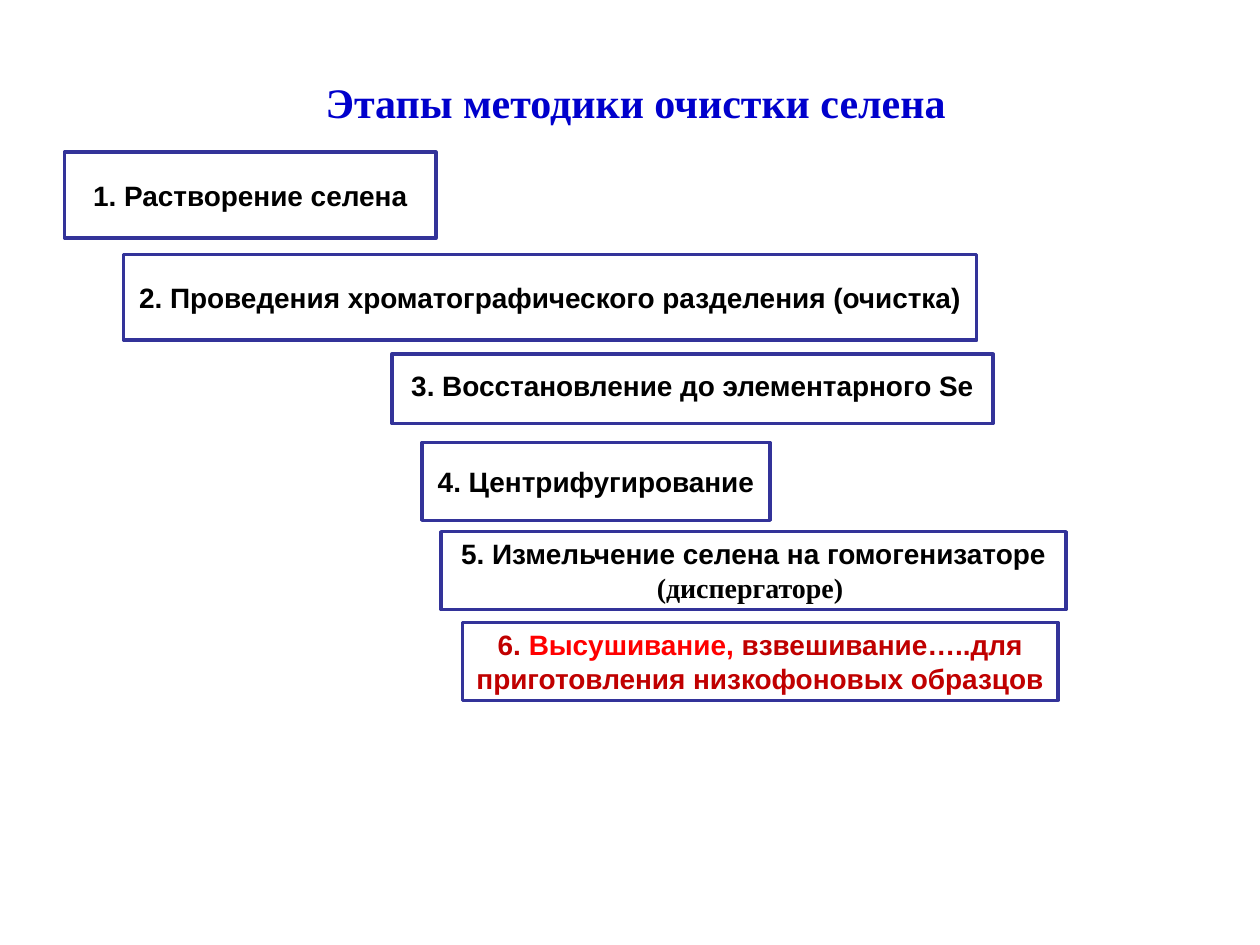
import dataclasses

import pptx
import pptx.dml.color
import pptx.enum.shapes
import pptx.enum.text
from pptx.util import Cm, Pt


@dataclasses.dataclass(frozen=True)
class Theme:
    title_font: str = "Times New Roman"
    step_font: str = "Arial"
    title_size: int = 24
    step_size: int = 16
    title: str = "0000CC"
    text: str = "000000"
    accent: str = "C00000"
    highlight: str = "FF0000"
    fill: str = "FFFFFF"
    border: str = "333399"
    border_width: int = 2


THEME = Theme()


@dataclasses.dataclass(frozen=True)
class TextRun:
    text: str
    color: str = THEME.text
    font: str = THEME.step_font
    size: int = THEME.step_size


@dataclasses.dataclass(frozen=True)
class Step:
    """A step box; all lengths are in centimetres."""
    left: float
    top: float
    width: float
    height: float
    runs: tuple
    bottom_margin: float = 0.13


STEPS = (
    Step(1.3, 3.07, 7.49, 1.73, (TextRun("1. Растворение селена"),)),
    Step(2.49, 5.13, 17.2, 1.73,
         (TextRun("2. Проведения хроматографического разделения (очистка)"),)),
    Step(7.9, 7.14, 12.12, 1.4,
         (TextRun("3. Восстановление до элементарного Se"),), bottom_margin=0.25),
    Step(8.51, 8.92, 7.01, 1.57, (TextRun("4. Центрифугирование "),)),
    Step(8.89, 10.72, 12.6, 1.57,
         (TextRun("5. Измельчение селена на гомогенизаторе "),
          TextRun("(диспергаторе) ", font=THEME.title_font))),
    Step(9.32, 12.55, 12.01, 1.57,
         (TextRun("6. ", THEME.accent),
          TextRun("Высушивание, ", THEME.highlight),
          TextRun("взвешивание…..для приготовления низкофоновых образцов ",
                  THEME.accent))),
)


def rgb(color):
    return pptx.dml.color.RGBColor.from_string(color)


def write_centered(shape, text_runs):
    text_frame = shape.text_frame
    text_frame.word_wrap = True
    text_frame.auto_size = pptx.enum.text.MSO_AUTO_SIZE.NONE
    text_frame.vertical_anchor = pptx.enum.text.MSO_ANCHOR.MIDDLE
    paragraph = text_frame.paragraphs[0]
    paragraph.alignment = pptx.enum.text.PP_ALIGN.CENTER
    for text_run in text_runs:
        run = paragraph.add_run()
        run.text = text_run.text
        run.font.name = text_run.font
        run.font.size = Pt(text_run.size)
        run.font.bold = True
        run.font.color.rgb = rgb(text_run.color)


def set_title(slide, text):
    title = slide.shapes.title
    title.left, title.top = Cm(4.32), Cm(1.32)
    title.width, title.height = Cm(16.99), Cm(1.45)
    write_centered(title, [TextRun(text, THEME.title, THEME.title_font, THEME.title_size)])


def add_step(slide, step):
    box = slide.shapes.add_shape(
        pptx.enum.shapes.MSO_SHAPE.RECTANGLE,
        Cm(step.left), Cm(step.top), Cm(step.width), Cm(step.height))
    box.shadow.inherit = False
    box.fill.solid()
    box.fill.fore_color.rgb = rgb(THEME.fill)
    box.line.color.rgb = rgb(THEME.border)
    box.line.width = Pt(THEME.border_width)
    box.text_frame.margin_bottom = Cm(step.bottom_margin)
    write_centered(box, step.runs)


def main():
    presentation = pptx.Presentation()
    presentation.slide_width, presentation.slide_height = Cm(25.4), Cm(19.05)
    title_only = presentation.slide_layouts[5]
    slide = presentation.slides.add_slide(title_only)
    set_title(slide, "Этапы методики очистки селена")
    for step in STEPS:
        add_step(slide, step)
    presentation.save("out.pptx")


if __name__ == "__main__":
    main()
